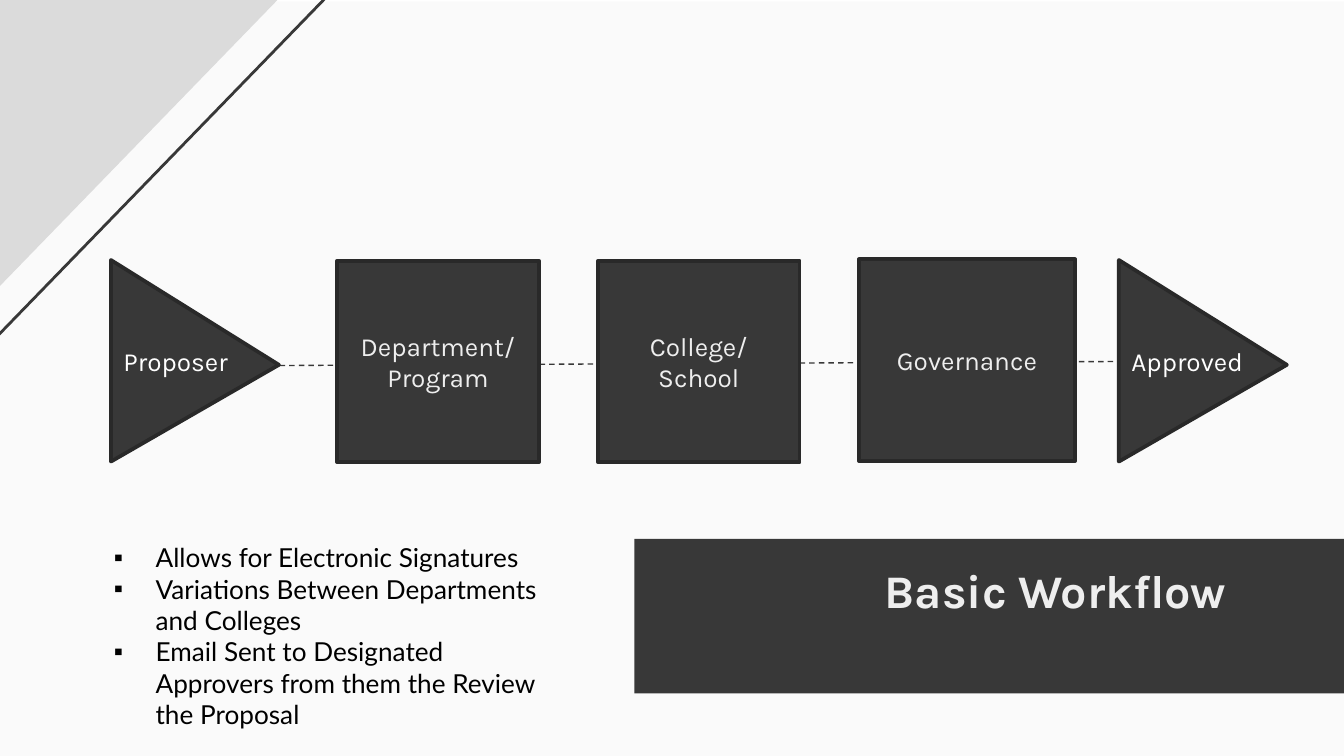
from lxml.etree import SubElement
from pptx import Presentation
from pptx.dml.color import RGBColor
from pptx.enum.dml import MSO_LINE
from pptx.enum.shapes import MSO_CONNECTOR, MSO_SHAPE
from pptx.enum.text import MSO_ANCHOR, PP_ALIGN
from pptx.oxml.ns import qn
from pptx.util import Inches, Pt

COLORS = {
    "dark": "383838",
    "outline": "292929",
    "corner": "DBDBDB",
    "light": "EEEEEE",
    "white": "FFFFFF",
    "black": "000000",
}
STEPS = [
    ("Department/Program", 2.51, 1.94, 1.5),
    ("College/ School", 4.45, 1.94, 1.5),
    ("Governance", 6.39, 1.93, 1.61),
]
# Label, left of the arrow, width of the label
ENDS = [("Proposer", 0.7, 1.24), ("Approved", 8.2, 1.18)]
NOTES = [
    "Allows for Electronic Signatures",
    "Variations Between Departments and Colleges",
    "Email Sent to Designated Approvers from them the Review the Proposal",
]


def rgb(name):
    return RGBColor.from_string(COLORS[name])


def add_block(slide, kind, box, fill=None, line=None, width=2, rotation=0):
    block = slide.shapes.add_shape(kind, *map(Inches, box))
    block.shadow.inherit = False
    block.rotation = rotation
    if fill:
        block.fill.solid()
        block.fill.fore_color.rgb = rgb(fill)
    else:
        block.fill.background()
    if line:
        block.line.color.rgb = rgb(line)
        block.line.width = Pt(width)
    else:
        block.line.fill.background()
    return block


def style(paragraph, text, color, font="Karla", size=14, bold=False,
          align=PP_ALIGN.LEFT):
    paragraph.text = text
    paragraph.alignment = align
    paragraph.font.name = font
    paragraph.font.size = Pt(size)
    paragraph.font.bold = bold
    paragraph.font.color.rgb = rgb(color)


def add_text_frame(slide, box):
    frame = slide.shapes.add_textbox(*map(Inches, box)).text_frame
    frame.word_wrap = True
    return frame


def add_bullet(paragraph, indent):
    properties = paragraph._p.get_or_add_pPr()
    properties.set("marL", str(Inches(indent)))
    properties.set("indent", str(-Inches(indent)))
    bullet_color = SubElement(properties, qn("a:buClr"))
    SubElement(bullet_color, qn("a:srgbClr"), val=COLORS["black"])
    SubElement(properties, qn("a:buFont"), typeface="Arial")
    SubElement(properties, qn("a:buChar"), char="▪")


def add_background(slide):
    tint = add_block(slide, MSO_SHAPE.RECTANGLE, (0, 0.01, 10, 5.62), "light")
    tint_color = tint.fill._xPr.find(qn("a:solidFill"))[0]
    SubElement(tint_color, qn("a:alpha"), val="24000")

    # Title band and corner triangles
    add_block(slide, MSO_SHAPE.RECTANGLE, (4.72, 4.01, 5.34, 1.15), "dark")
    add_block(slide, MSO_SHAPE.RIGHT_TRIANGLE, (-0.37, -0.86, 3.72, 3.61),
              line="dark", width=1.5, rotation=90)
    add_block(slide, MSO_SHAPE.RIGHT_TRIANGLE, (-0.48, -1.1, 3.72, 3.61),
              "corner", rotation=90)


def add_flow_line(slide):
    flow = slide.shapes.add_connector(
        MSO_CONNECTOR.STRAIGHT, *map(Inches, (2.08, 2.72, 8.32, 2.69)))
    flow.line.color.rgb = rgb("dark")
    flow.line.width = Pt(0.75)
    flow.line.dash_style = MSO_LINE.DASH
    SubElement(flow._element.spPr, qn("a:effectLst"))


def add_title(slide):
    frame = add_text_frame(slide, (5, 4.08, 4.22, 0.85))
    frame.margin_top = frame.margin_bottom = Inches(0.1)
    style(frame.paragraphs[0], "Basic Workflow", "light", size=25, bold=True,
          align=PP_ALIGN.RIGHT)


def add_step(slide, label, left, top, width):
    step = add_block(slide, MSO_SHAPE.RECTANGLE, (left, top, width, 1.5),
                     "dark", "outline")
    frame = step.text_frame
    frame.word_wrap = True
    frame.vertical_anchor = MSO_ANCHOR.MIDDLE
    style(frame.paragraphs[0], label, "light", align=PP_ALIGN.CENTER)


def add_end(slide, label, left, label_width):
    arrow = add_block(slide, MSO_SHAPE.ISOSCELES_TRIANGLE,
                      (left, 2.06, 1.5, 1.25), "dark", "outline", rotation=90)
    arrow.adjustments[0] = 0.52
    frame = add_text_frame(slide, (left + 0.12, 2.52, label_width, 0.34))
    style(frame.paragraphs[0], label, "white")


def add_notes_list(slide):
    frame = add_text_frame(slide, (0.75, 3.98, 3.54, 1.28))
    for index, note in enumerate(NOTES):
        paragraph = frame.add_paragraph() if index else frame.paragraphs[0]
        style(paragraph, note, "black", font="Lato")
        add_bullet(paragraph, 0.31)


def main():
    # Widescreen slide, 16:9
    deck = Presentation()
    deck.slide_width = Inches(10)
    deck.slide_height = Inches(10) * 9 // 16
    slide = deck.slides.add_slide(deck.slide_layouts[6])

    add_background(slide)
    add_title(slide)

    # Workflow, with the line behind the steps
    add_flow_line(slide)
    for step in STEPS:
        add_step(slide, *step)
    for end in ENDS:
        add_end(slide, *end)

    add_notes_list(slide)
    deck.save("out.pptx")


if __name__ == "__main__":
    main()
